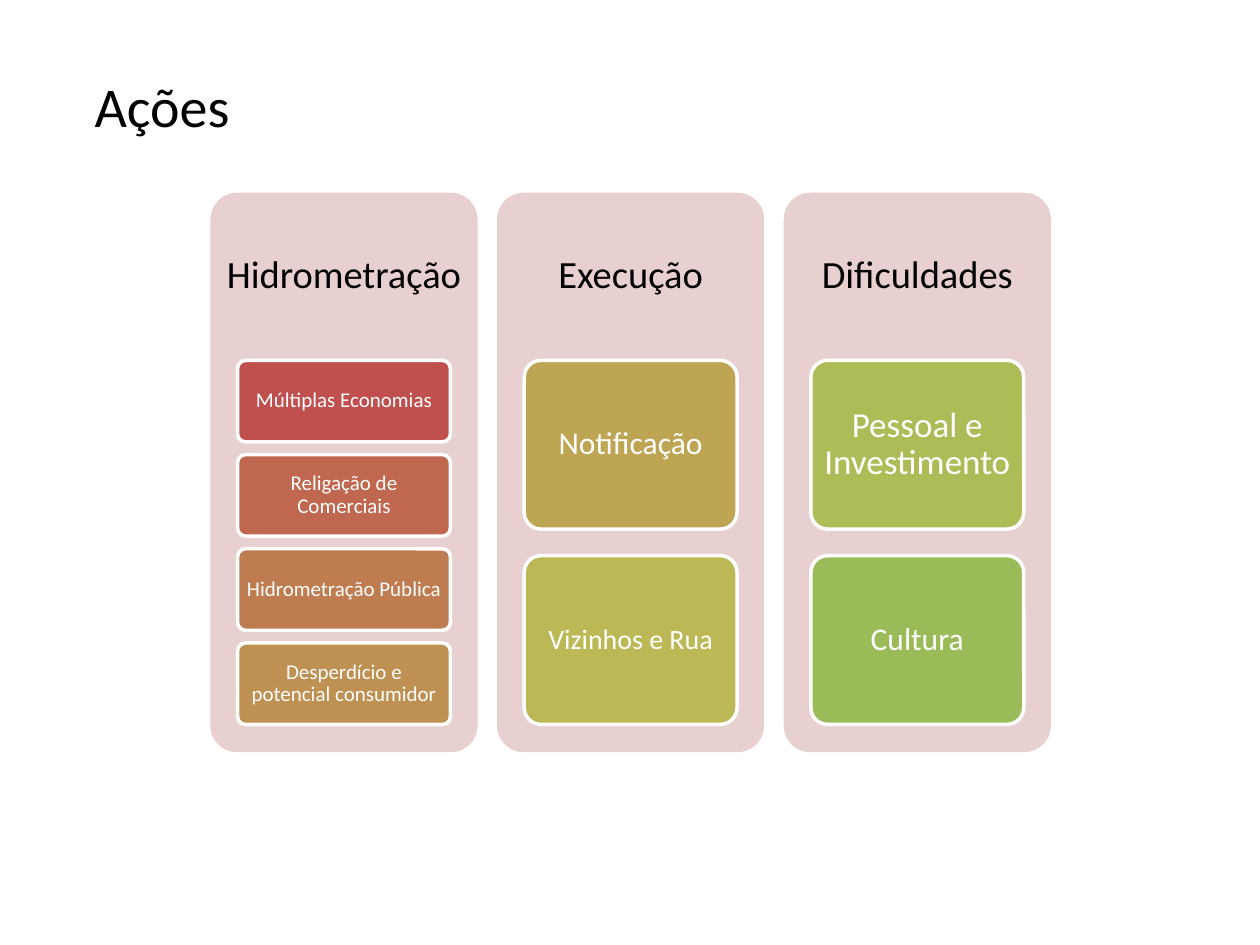
from pptx import Presentation
from pptx.dml.color import RGBColor
from pptx.enum.shapes import MSO_SHAPE as Shape
from pptx.enum.text import MSO_ANCHOR as Anchor, PP_ALIGN as Align
from pptx.util import Inches, Pt

COLORS = {"text": "000000", "panel": "E8D0D0", "white": "FFFFFF"}
FONT = "Calibri"
LEFT, TOP, WIDTH, HEIGHT, STEP = 1.67, 1.53, 2.12, 4.44, 2.275
HEAD = 1.33
CARD_WIDTH, CARD_AREA = 1.69, 2.89

# Heading, gap between cards, cards as (text, size, fill, side inset, top inset)
COLUMNS = [
    ("Hidrometração", 0.1, [
        ("Múltiplas Economias", 12, "C0504D", 0.03, 0.03),
        ("Religação de Comerciais", 12, "BF674F", 0.03, 0.03),
        ("Hidrometração Pública", 12, "BF7C50", 0.03, 0.03),
        ("Desperdício e\vpotencial consumidor", 12, "BE9152", 0.03, 0.03),
    ]),
    ("Execução", 0.21, [
        ("Notificação", 18, "BDA554", 0.05, 0.04),
        ("Vizinhos e Rua", 16, "BCB856", 0.04, 0.03),
    ]),
    ("Dificuldades", 0.21, [
        ("Pessoal e Investimento", 20, "AEBC57", 0.06, 0.04),
        ("Cultura", 18, "9BBB59", 0.05, 0.04),
    ]),
]


def set_text(shape, text, size, color, side, top,
             align=Align.CENTER, anchor=Anchor.MIDDLE, spacing=0.9):
    frame = shape.text_frame
    frame.text = text
    frame.word_wrap = True
    frame.vertical_anchor = anchor
    frame.margin_left = frame.margin_right = Inches(side)
    frame.margin_top = frame.margin_bottom = Inches(top)
    para = frame.paragraphs[0]
    para.alignment = align
    para.line_spacing = spacing
    for run in para.runs:
        run.font.name = FONT
        run.font.size = Pt(size)
        run.font.color.rgb = RGBColor.from_string(color)


def add_round(slide, x, y, width, height, fill):
    shape = slide.shapes.add_shape(
        Shape.ROUNDED_RECTANGLE, Inches(x), Inches(y), Inches(width), Inches(height))
    shape.adjustments[0] = 0.1
    shape.shadow.inherit = False
    shape.fill.solid()
    shape.fill.fore_color.rgb = RGBColor.from_string(fill)
    shape.line.fill.background()
    return shape


def add_card(slide, x, y, height, card):
    text, size, fill, side, top = card
    shape = add_round(slide, x, y, CARD_WIDTH, height, fill)
    shape.line.color.rgb = RGBColor.from_string(COLORS["white"])
    shape.line.width = Pt(2)
    set_text(shape, text, size, COLORS["white"], side, top)


def add_column(slide, x, heading, gap, cards):
    add_round(slide, x, TOP, WIDTH, HEIGHT, COLORS["panel"])
    box = slide.shapes.add_textbox(Inches(x), Inches(TOP), Inches(WIDTH), Inches(HEAD))
    set_text(box, heading, 22, COLORS["text"], 0.09, 0.09)
    height = (CARD_AREA - gap * (len(cards) - 1)) / len(cards)
    card_x = x + (WIDTH - CARD_WIDTH) / 2
    for row, card in enumerate(cards):
        add_card(slide, card_x, TOP + HEAD + row * (height + gap), height, card)


def add_title(slide, text):
    title = slide.shapes.title
    title.left, title.top = Inches(0.65), Inches(0.52)
    title.width, title.height = Inches(8.7), Inches(4.72)
    set_text(title, text, 32, COLORS["text"], 0.1, 0.05, Align.LEFT, Anchor.TOP, 1)


def main():
    deck = Presentation()
    deck.slide_width, deck.slide_height = Inches(10), Inches(7.5)
    slide = deck.slides.add_slide(deck.slide_layouts[5])
    add_title(slide, "Ações")
    for index, column in enumerate(COLUMNS):
        add_column(slide, LEFT + index * STEP, *column)
    deck.save("out.pptx")


if __name__ == "__main__":
    main()
